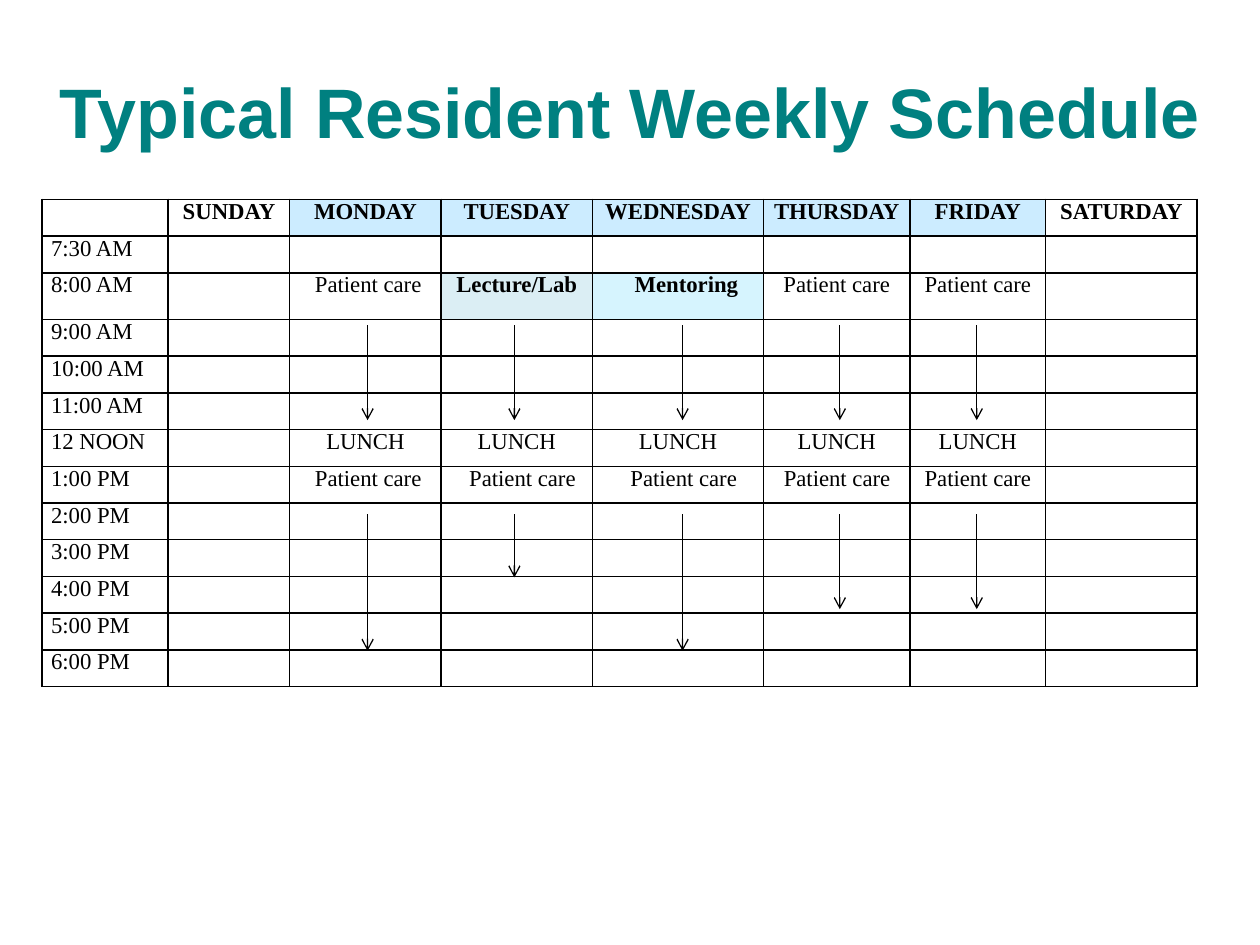
from lxml import etree
from pptx import Presentation
from pptx.dml.color import RGBColor
from pptx.enum.shapes import MSO_CONNECTOR
from pptx.enum.text import MSO_ANCHOR, PP_ALIGN
from pptx.oxml.ns import qn
from pptx.util import Cm, Pt

CENTER, LEFT = PP_ALIGN.CENTER, PP_ALIGN.LEFT
MIDDLE = MSO_ANCHOR.MIDDLE
STRAIGHT = MSO_CONNECTOR.STRAIGHT

COLORS = {
    "title": "008080",
    "ink": "000000",
    "weekday": "CCECFF",
    "lecture": "DBEEF4",
    "mentoring": "D6F4FE",
}
DAYS = ["SUNDAY", "MONDAY", "TUESDAY", "WEDNESDAY", "THURSDAY", "FRIDAY", "SATURDAY"]
TIMES = ["7:30 AM", "8:00 AM", "9:00 AM", "10:00 AM", "11:00 AM", "12 NOON",
         "1:00 PM", "2:00 PM", "3:00 PM", "4:00 PM", "5:00 PM", "6:00 PM"]
CARE = "Patient care"
ACTIVITIES = {
    "8:00 AM": ["", CARE, "Lecture/Lab", "Mentoring", CARE, CARE, ""],
    "12 NOON": ["", *["LUNCH"] * 5, ""],
    "1:00 PM": ["", *[CARE] * 5, ""],
}
COLUMN_WIDTHS = [2.54, 2.45, 3.05, 3.05, 3.45, 2.95, 2.74, 3.05]
ROW_HEIGHT, TALL_ROW_HEIGHT, TALL_ROW = 0.74, 0.94, 2
SIDE_MARGIN = 0.18
EXTRA_INDENTS = {(2, 2): 0.11, (2, 4): 0.34, (7, 2): 0.11,
                 (7, 3): 0.23, (7, 4): 0.23, (7, 5): 0.23}
LEFT_ALIGNED = {(7, 5)}
FILLS = {(0, column): "weekday" for column in range(2, 7)}
FILLS.update({(2, 3): "lecture", (2, 4): "mentoring"})
BOLD_TEXTS = {*DAYS, "Lecture/Lab", "Mentoring"}


def style_font(font, **values):
    for name, value in values.items():
        setattr(font, name, value)


def add_borders(cell):
    properties = cell._tc.get_or_add_tcPr()
    for side in ("a:lnL", "a:lnR", "a:lnT", "a:lnB"):
        line = etree.SubElement(properties, qn(side), w=str(Pt(1)))
        fill = etree.SubElement(line, qn("a:solidFill"))
        etree.SubElement(fill, qn("a:srgbClr"), val=COLORS["ink"])


presentation = Presentation()
presentation.slide_width = Cm(25.4)
presentation.slide_height = Cm(19.05)
slide = presentation.slides.add_slide(presentation.slide_layouts[5])

# Title
title = slide.shapes.title
title.left, title.top, title.width, title.height = Cm(0), Cm(0.85), Cm(25.4), Cm(2.75)
title.text_frame.vertical_anchor = MIDDLE
paragraph = title.text_frame.paragraphs[0]
paragraph.alignment = CENTER
run = paragraph.add_run()
run.text = "Typical Resident Weekly Schedule"
style_font(run.font, name="Arial", size=Pt(40), bold=True)
run.font.color.rgb = RGBColor.from_string(COLORS["title"])

# Weekly schedule
schedule = [["", *DAYS]]
schedule += [[time, *ACTIVITIES.get(time, [""] * len(DAYS))] for time in TIMES]
row_heights = [ROW_HEIGHT] * len(schedule)
row_heights[TALL_ROW] = TALL_ROW_HEIGHT
table = slide.shapes.add_table(
    len(schedule), len(COLUMN_WIDTHS), Cm(0.85), Cm(4.02),
    Cm(sum(COLUMN_WIDTHS)), Cm(sum(row_heights))).table
table.first_row = table.horz_banding = False
for column, width in zip(table.columns, COLUMN_WIDTHS):
    column.width = Cm(width)
for row, height in zip(table.rows, row_heights):
    row.height = Cm(height)

for row_index, texts in enumerate(schedule):
    for column_index, text in enumerate(texts):
        position = (row_index, column_index)
        cell = table.cell(*position)
        cell.margin_left = Cm(SIDE_MARGIN + EXTRA_INDENTS.get(position, 0))
        cell.margin_right = Cm(SIDE_MARGIN)
        cell.margin_top = cell.margin_bottom = Cm(0)
        add_borders(cell)
        if position in FILLS:
            cell.fill.solid()
            cell.fill.fore_color.rgb = RGBColor.from_string(COLORS[FILLS[position]])
        else:
            cell.fill.background()
        paragraph = cell.text_frame.paragraphs[0]
        if not text:
            # Keeps an empty cell from growing to the default text size
            etree.SubElement(paragraph._p, qn("a:endParaRPr"), sz="1300")
            continue
        left_aligned = column_index == 0 or position in LEFT_ALIGNED
        paragraph.alignment = LEFT if left_aligned else CENTER
        run = paragraph.add_run()
        run.text = text
        style_font(run.font, name="Times New Roman", size=Pt(13), bold=text in BOLD_TEXTS)
        run.font.color.rgb = RGBColor.from_string(COLORS["ink"])

# Arrows: x of each weekday and the end of its afternoon
MORNING_START, MORNING_END, AFTERNOON_START = 6.56, 8.47, 10.37
AFTERNOONS = [(7.41, 13.12), (10.37, 11.64), (13.76, 13.12), (16.93, 12.28), (19.69, 12.28)]
for x, afternoon_end in AFTERNOONS:
    for start, end in ((MORNING_START, MORNING_END), (AFTERNOON_START, afternoon_end)):
        arrow = slide.shapes.add_connector(STRAIGHT, Cm(x), Cm(start), Cm(x), Cm(end))
        arrow.line.width = Pt(0.75)
        arrow.line.color.rgb = RGBColor.from_string(COLORS["ink"])
        etree.SubElement(arrow.line._get_or_add_ln(), qn("a:tailEnd"), type="arrow")
        etree.SubElement(arrow._element.spPr, qn("a:effectLst"))

presentation.save("out.pptx")
